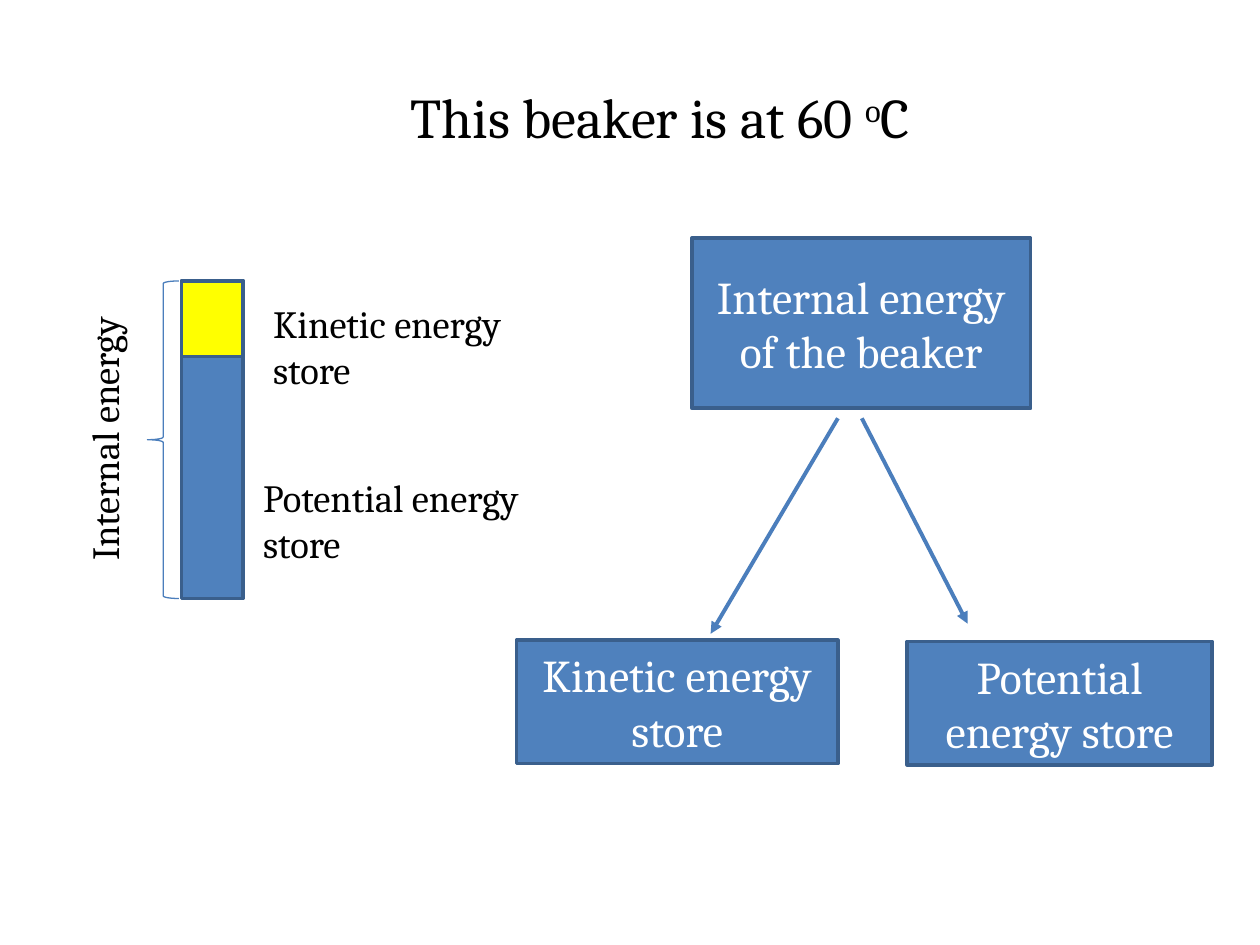
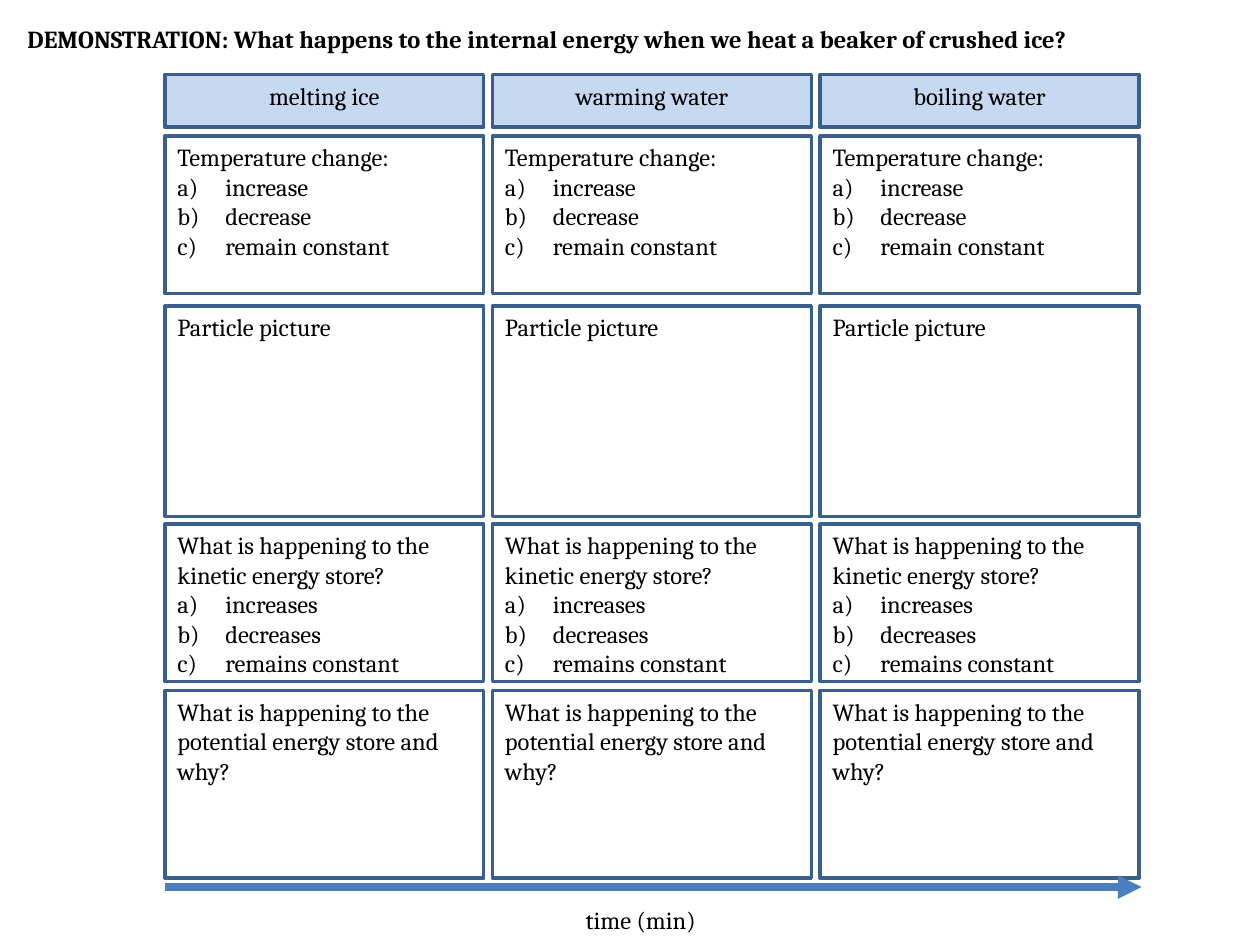
"""Build two slides on the internal energy of a heated beaker."""
from pptx import Presentation
from pptx.dml.color import RGBColor
from pptx.enum.shapes import MSO_CONNECTOR, MSO_SHAPE
from pptx.enum.text import MSO_ANCHOR, MSO_AUTO_SIZE, PP_ALIGN
from pptx.oxml.ns import qn
from pptx.util import Inches, Pt
from lxml.etree import SubElement

FONT = "Cambria"
BLACK = RGBColor(0, 0, 0)
WHITE = RGBColor(255, 255, 255)
BLUE = RGBColor(0x4F, 0x81, 0xBD)
EDGE = RGBColor(0x3A, 0x5F, 0x8C)
ARROW = RGBColor(0x4B, 0x7E, 0xBC)
PALE = RGBColor(0xC6, 0xD9, 0xF1)
YELLOW = RGBColor(255, 255, 0)

TITLE = [("This beaker is at 60 ", 0), ("o", 30), ("C", 0)]
STORES = [
    ("Internal energy of the beaker", (5.49, 1.89, 2.69, 1.35)),
    ("Kinetic energy store", (4.1, 5.08, 2.55, 0.98)),
    ("Potential energy store", (7.2, 5.09, 2.42, 0.98)),
]
LINKS = [(6.65, 3.32, 5.64, 5.03), (6.84, 3.32, 7.68, 4.95)]
BAR = (1.44, 2.23, 0.49, 2.52)
KINETIC = 0.6
LABELS = [
    ("Internal energy", (-0.68, 2.81, 3.01, 0.47), 270),
    ("Potential energy store", (1.99, 3.71, 2.68, 0.84), 0),
    ("Kinetic energy store", (2.07, 2.33, 2.68, 0.84), 0),
]

HEADING = "DEMONSTRATION: What happens to the internal energy when we heat a beaker of crushed ice?"
STAGES = ["melting ice", "warming water", "boiling water"]
ROWS = [
    (1.08, 1.25, "Temperature change:", ["increase", "decrease", "remain constant"]),
    (2.43, 1.67, "Particle picture", []),
    (4.16, 1.25, "What is happening to the kinetic energy store?",
     ["increases", "decreases", "remains constant"]),
    (5.48, 1.49, "What is happening to the potential energy store and why?", []),
]
LEFT, STEP, WIDE = 1.31, 2.6, 2.53
HEAD_TOP, HEAD_TALL = 0.59, 0.42


def style(para, size, color=BLACK, align=PP_ALIGN.LEFT, bold=False):
    para.alignment = align
    font = para.font
    font.name, font.size, font.bold = FONT, Pt(size), bold
    font.color.rgb = color


def shape(slide, kind, area, fill=None, line=EDGE, width=2):
    item = slide.shapes.add_shape(kind, *map(Inches, area))
    item.shadow.inherit = False
    if fill is None:
        item.fill.background()
    else:
        item.fill.solid()
        item.fill.fore_color.rgb = fill
    item.line.color.rgb = line
    item.line.width = Pt(width)
    return item


def box(slide, area, fill, text, size, color=BLACK, align=PP_ALIGN.CENTER,
        anchor=MSO_ANCHOR.TOP):
    frame = shape(slide, MSO_SHAPE.RECTANGLE, area, fill).text_frame
    frame.vertical_anchor = anchor
    frame.text = text
    style(frame.paragraphs[0], size, color, align)
    return frame


def label(slide, area, text, size, turn=0, bold=False):
    item = slide.shapes.add_textbox(*map(Inches, area))
    item.rotation = turn
    frame = item.text_frame
    frame.word_wrap = True
    frame.auto_size = MSO_AUTO_SIZE.SHAPE_TO_FIT_TEXT
    frame.text = text
    style(frame.paragraphs[0], size, bold=bold)


def arrow(slide, ends, width):
    item = slide.shapes.add_connector(MSO_CONNECTOR.STRAIGHT, *map(Inches, ends))
    item.line.color.rgb = ARROW
    item.line.width = Pt(width)
    SubElement(item.line._get_or_add_ln(), qn("a:tailEnd"), type="triangle")
    SubElement(item._element.spPr, qn("a:effectLst"))


def choices(frame, items):
    for text in items:
        para = frame.add_paragraph()
        para.text = text
        style(para, 14)
        props = para._p.get_or_add_pPr()
        props.set("marL", str(Inches(0.38)))
        props.set("indent", str(-Inches(0.38)))
        bullet = props.makeelement(qn("a:buAutoNum"), {"type": "alphaLcParenR"})
        props.insert(0, bullet)


def title(slide):
    frame = slide.shapes.add_textbox(*map(Inches, (0.98, 0.3, 8.52, 1.25))).text_frame
    frame.word_wrap = True
    frame.vertical_anchor = MSO_ANCHOR.MIDDLE
    para = frame.paragraphs[0]
    style(para, 32, align=PP_ALIGN.CENTER)
    for text, lift in TITLE:
        run = para.add_run()
        run.text = text
        if lift:
            run._r.get_or_add_rPr().set("baseline", str(lift * 1000))


def beaker(slide):
    title(slide)
    for text, area in STORES:
        box(slide, area, BLUE, text, 26, WHITE, anchor=MSO_ANCHOR.MIDDLE)
    for ends in LINKS:
        arrow(slide, ends, 2.25)
    x, y, wide, tall = BAR
    shape(slide, MSO_SHAPE.RECTANGLE, BAR, BLUE)
    shape(slide, MSO_SHAPE.RECTANGLE, (x, y, wide, KINETIC), YELLOW)
    shape(slide, MSO_SHAPE.LEFT_BRACE, (1.17, y, 0.25, tall), line=ARROW, width=0.75)
    for text, area, turn in LABELS:
        label(slide, area, text, 22, turn)


def demo(slide):
    label(slide, (0.12, 0.14, 10.24, 0.34), HEADING, 14, bold=True)
    for col, stage in enumerate(STAGES):
        x = LEFT + col * STEP
        box(slide, (x, HEAD_TOP, WIDE, HEAD_TALL), PALE, stage, 14)
        for y, tall, text, items in ROWS:
            frame = box(slide, (x, y, WIDE, tall), WHITE, text, 14, align=PP_ALIGN.LEFT)
            choices(frame, items)
    arrow(slide, (LEFT, 7.04, 9.06, 7.04), 4.5)
    label(slide, (4.55, 7.13, 2.27, 0.34), "time (min)", 14)


def main():
    deck = Presentation()
    deck.slide_width, deck.slide_height = Inches(10), Inches(7.5)
    for draw in (beaker, demo):
        draw(deck.slides.add_slide(deck.slide_layouts[6]))
    deck.save("out.pptx")


if __name__ == "__main__":
    main()
